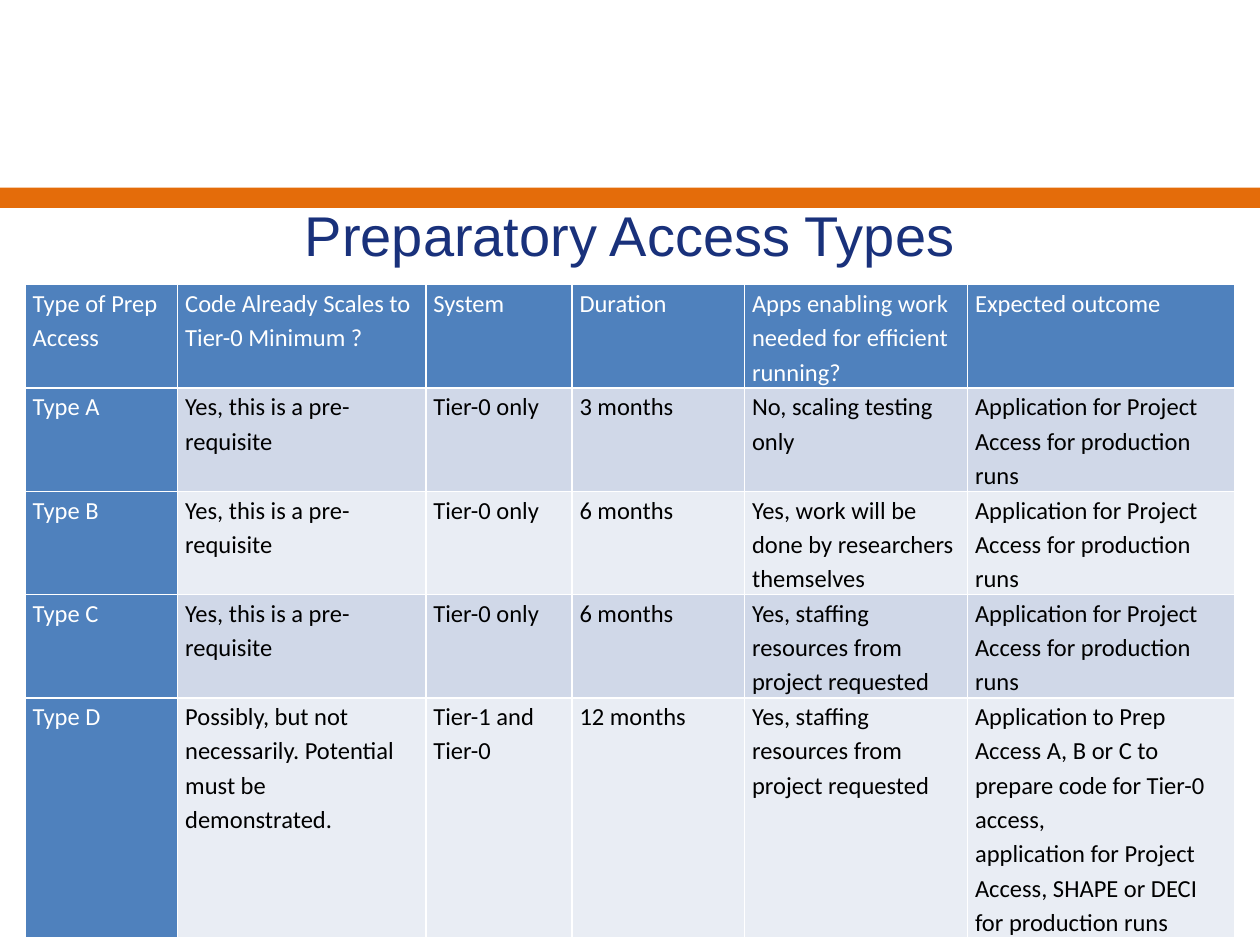
"""Build the slide that compares the preparatory access types."""
from dataclasses import dataclass

from lxml.etree import SubElement
from pptx import Presentation
from pptx.dml.color import RGBColor
from pptx.enum.shapes import MSO_SHAPE
from pptx.enum.text import MSO_ANCHOR, PP_ALIGN
from pptx.oxml.ns import qn
from pptx.util import Inches, Pt

TITLE = "Preparatory Access Types"
HEADER = ["Type of Prep Access", "Code Already Scales to Tier-0 Minimum ?", "System", "Duration",
          "Apps enabling work needed for efficient running?", "Expected outcome"]
SCALES = "Yes, this is a pre-requisite"
STAFFING = "Yes, staffing resources from project requested"
PROJECT = "Application for Project Access for production runs"
ROWS = [
    HEADER,
    ["Type A", SCALES, "Tier-0 only", "3 months", "No, scaling testing only", PROJECT],
    ["Type B", SCALES, "Tier-0 only", "6 months",
     "Yes, work will be done by researchers themselves", PROJECT],
    ["Type C", SCALES, "Tier-0 only", "6 months", STAFFING, PROJECT],
    ["Type D", "Possibly, but not necessarily. Potential must be demonstrated.",
     "Tier-1 and Tier-0", "12 months", STAFFING,
     "Application to Prep Access A, B or C to prepare code for Tier-0 access,\n"
     "application for Project Access, SHAPE or DECI for production runs"],
]
COL_WIDTHS = [1.21, 1.97, 1.16, 1.37, 1.77, 2.12]
ROW_HEIGHTS = [0.82] * 4 + [1.9]
WIDTH, HEIGHT = 10, 7.5


@dataclass(frozen=True)
class Theme:
    bar: str = "E46C0A"
    title: str = "19317B"
    head: str = "4F81BD"
    bands: tuple = ("E9EDF4", "D0D8E8")
    light: str = "FFFFFF"
    dark: str = "000000"
    title_font: str = "Arial"
    body_font: str = "Calibri"
    title_size: int = 32
    body_size: int = 14
    spacing: float = 1.15
    border: float = 1


T = Theme()


def paint(fill, color):
    fill.solid()
    fill.fore_color.rgb = RGBColor.from_string(color)


def add_run(p, text, font, size, color):
    r = p.add_run()
    r.text = text
    r.font.name, r.font.size = font, Pt(size)
    r.font.color.rgb = RGBColor.from_string(color)


def add_bar(s):
    sp = s.shapes.add_shape(MSO_SHAPE.RECTANGLE, 0, Inches(1.49), Inches(WIDTH), Inches(0.16))
    sp.shadow.inherit = False
    paint(sp.fill, T.bar)
    sp.line.fill.background()


def add_title(s):
    sp = s.shapes.add_textbox(Inches(0.5), Inches(1.23), Inches(WIDTH - 1), Inches(1.25))
    tf = sp.text_frame
    tf.word_wrap = True
    tf.vertical_anchor = MSO_ANCHOR.MIDDLE
    p = tf.paragraphs[0]
    p.alignment = PP_ALIGN.CENTER
    add_run(p, TITLE, T.title_font, T.title_size, T.title)


def add_borders(cell):
    tc_pr = cell._tc.get_or_add_tcPr()
    for side in ("lnL", "lnR", "lnT", "lnB"):
        ln = SubElement(tc_pr, qn(f"a:{side}"), w=str(Pt(T.border)))
        SubElement(SubElement(ln, qn("a:solidFill")), qn("a:srgbClr"), val=T.light)


def fill_cell(cell, text, fill, color):
    cell.margin_left = cell.margin_right = Inches(0.06)
    cell.margin_top = cell.margin_bottom = 0
    add_borders(cell)
    paint(cell.fill, fill)
    tf = cell.text_frame
    for i, line in enumerate(text.split("\n")):
        p = tf.add_paragraph() if i else tf.paragraphs[0]
        p.line_spacing = T.spacing
        add_run(p, line, T.body_font, T.body_size, color)


def add_access_table(s):
    frame = s.shapes.add_table(len(ROWS), len(HEADER), Inches(0.2), Inches(2.26),
                               Inches(sum(COL_WIDTHS)), Inches(sum(ROW_HEIGHTS)))
    table = frame.table
    table.first_row = table.horz_banding = False
    for col, width in zip(table.columns, COL_WIDTHS):
        col.width = Inches(width)
    for row, height in zip(table.rows, ROW_HEIGHTS):
        row.height = Inches(height)
    for i, row in enumerate(ROWS):
        for j, text in enumerate(row):
            is_head = i == 0 or j == 0
            fill_cell(table.cell(i, j), text, T.head if is_head else T.bands[i % 2],
                      T.light if is_head else T.dark)


def main():
    prs = Presentation()
    prs.slide_width, prs.slide_height = Inches(WIDTH), Inches(HEIGHT)
    s = prs.slides.add_slide(prs.slide_layouts[6])
    add_bar(s)
    add_title(s)
    add_access_table(s)
    prs.save("out.pptx")


if __name__ == "__main__":
    main()
